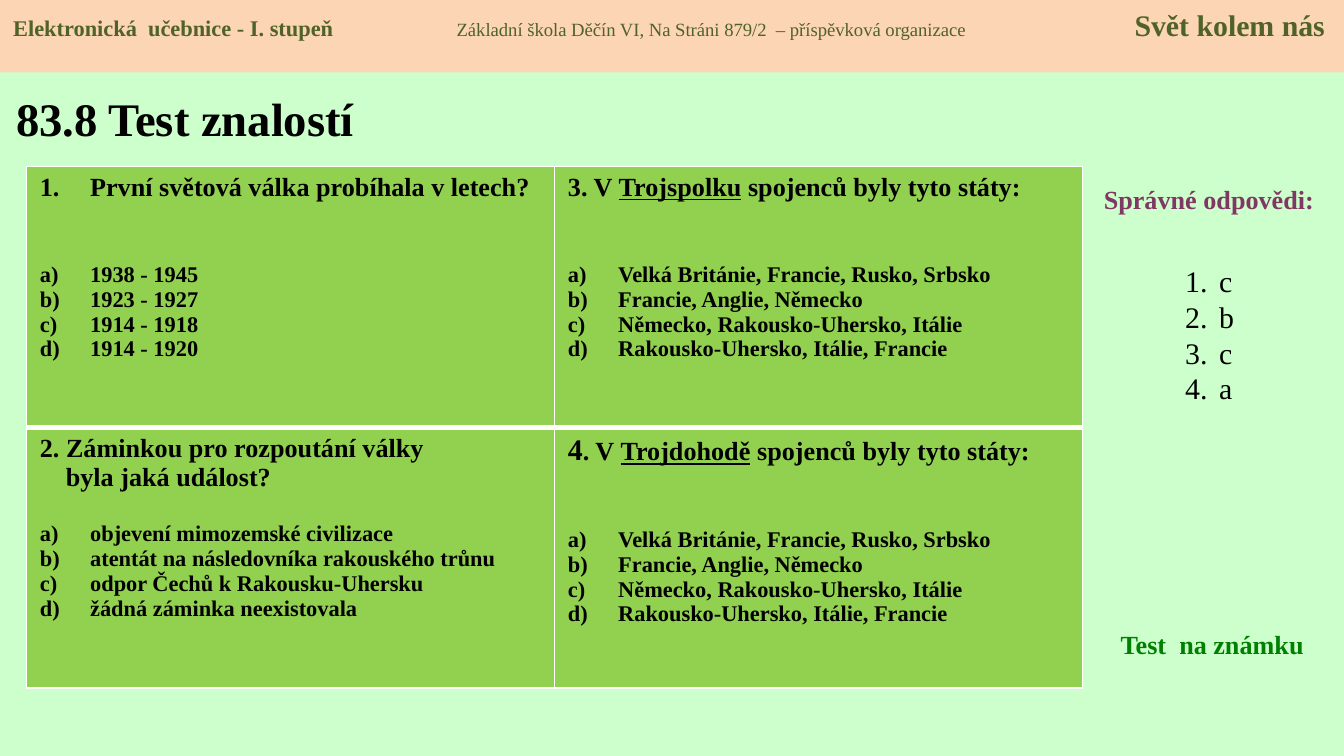
"""Build the quiz slide 83.8 with its table, answers and header band."""
from pptx import Presentation as Deck
from pptx.dml.color import RGBColor as Rgb
from pptx.enum.shapes import MSO_SHAPE as Kind
from pptx.enum.text import MSO_ANCHOR as Anchor, PP_ALIGN as Align
from pptx.oxml.ns import qn
from pptx.util import Cm, Pt
from lxml.etree import SubElement as Sub

HUES = {"page": "CCFFCC", "band": "FCD5B5", "cell": "92D050", "line": "FFFFFF",
        "text": "000000", "head": "4F6228", "plum": "813763", "mark": "008000"}
FACE = "Times New Roman"
ASK = {"size": Pt(14), "bold": True}
PICK = {"size": Pt(12), "bold": True}
STATES = ["Velká Británie, Francie, Rusko, Srbsko", "Francie, Anglie, Německo",
          "Německo, Rakousko-Uhersko, Itálie", "Rakousko-Uhersko, Itálie, Francie"]


def ask(text, **more):
    return text, {**ASK, **more}


QUIZ = [
    [{"ask": [[ask("První světová válka probíhala v letech?")]], "num": True, "gap": 32.2,
      "picks": ["1938 - 1945", "1923 - 1927", "1914 - 1918", "1914 - 1920"]},
     {"ask": [[ask("3. V "), ask("Trojspolku", underline=True),
               ask(" spojenců byly tyto státy:")]], "gap": 32.2, "picks": STATES}],
    [{"ask": [[ask("2. Záminkou pro rozpoutání války")], [ask("byla jaká událost?")]],
      "gap": 16.1,
      "picks": ["objevení mimozemské civilizace",
                "atentát na následovníka rakouského trůnu",
                "odpor Čechů k Rakousku-Uhersku", "žádná záminka neexistovala"]},
     {"ask": [[ask("4", size=Pt(16)), ask(". V "), ask("Trojdohodě", underline=True),
               ask(" spojenců byly tyto státy:")]], "gap": 32.2, "picks": STATES}],
]


class Page:
    def __init__(self, deck):
        self.slide = deck.slides.add_slide(deck.slide_layouts[5])
        self.paint(self.slide.background.fill, "page")

    def paint(self, fill, hue):
        fill.solid()
        fill.fore_color.rgb = Rgb.from_string(HUES[hue])

    def put(self, para, runs, hue="text"):
        for text, style in runs:
            run = para.add_run()
            run.text = text
            for key, val in {"name": FACE, **style}.items():
                setattr(run.font, key, val)
            run.font.color.rgb = Rgb.from_string(HUES[hue])

    def line(self, frame, first):
        return frame.paragraphs[0] if first else frame.add_paragraph()

    def indent(self, para, left, hang=0, mark=None):
        props = para._p.get_or_add_pPr()
        props.set("marL", str(Cm(left)))
        props.set("indent", str(-Cm(hang)))
        if mark:
            Sub(props, qn("a:buFont"), typeface="+mj-lt")
            Sub(props, qn("a:buAutoNum"), type=mark)

    def title(self, text, box):
        shape = self.slide.shapes.title
        for key, val in zip(("left", "top", "width", "height"), box):
            setattr(shape, key, Cm(val))
        frame = shape.text_frame
        frame.vertical_anchor = Anchor.MIDDLE
        para = frame.paragraphs[0]
        para.alignment = Align.LEFT
        self.put(para, [(text, {"size": Pt(25), "bold": True})])

    def label(self, lines, box, style, hue="text", align=Align.LEFT, mark=None):
        frame = self.slide.shapes.add_textbox(*map(Cm, box)).text_frame
        frame.word_wrap = False
        for i, line in enumerate(lines):
            para = self.line(frame, i == 0)
            if mark:
                self.indent(para, 0.64, 0.64, mark)
            para.alignment = align
            self.put(para, [(line, style)], hue)

    def band(self, runs, box, tabs):
        shape = self.slide.shapes.add_shape(Kind.RECTANGLE, *map(Cm, box))
        shape.shadow.inherit = False
        self.paint(shape.fill, "band")
        shape.line.fill.background()
        frame = shape.text_frame
        frame.word_wrap = True
        frame.vertical_anchor = Anchor.TOP
        para = frame.paragraphs[0]
        para.alignment = Align.LEFT
        stops = Sub(para._p.get_or_add_pPr(), qn("a:tabLst"))
        for place, side in tabs:
            Sub(stops, qn("a:tab"), pos=str(Cm(place)), algn=side)
        self.put(para, runs, "head")

    def edge(self, cell, sides):
        props = cell._tc.get_or_add_tcPr()
        for side, width in sides.items():
            line = Sub(props, qn(f"a:ln{side}"), w=str(Pt(width)))
            Sub(Sub(line, qn("a:solidFill")), qn("a:srgbClr"), val=HUES["line"])

    def fill(self, cell, item):
        frame = cell.text_frame
        for i, runs in enumerate(item["ask"]):
            para = self.line(frame, i == 0)
            if item.get("num"):
                self.indent(para, 0.95, 0.95, "arabicPeriod")
            elif i:
                self.indent(para, 0.49)
            self.put(para, runs)
        for i, pick in enumerate(item["picks"]):
            para = frame.add_paragraph()
            self.indent(para, 0.95, 0.95, "alphaLcParenR")
            if i == 0:
                para.space_before = Pt(item["gap"])
            self.put(para, [(pick, PICK)])

    def table(self, rows, box):
        grid = self.slide.shapes.add_table(len(rows), len(rows[0]), *map(Cm, box)).table
        for r, row in enumerate(rows):
            for c, item in enumerate(row):
                cell = grid.cell(r, c)
                self.fill(cell, item)
                self.edge(cell, {"L": 1, "R": 1, "T": 3 if r else 1, "B": 1 if r else 3})
                self.paint(cell.fill, "cell")


def main():
    deck = Deck()
    deck.slide_width, deck.slide_height = Cm(25.4), Cm(14.29)
    page = Page(deck)
    page.title("83.8 Test znalostí", (0.05, 1.4, 8.1, 1.65))
    page.label(["Správné odpovědi:"], (20.45, 3.35, 4.8, 0.86), ASK, "plum", Align.CENTER)
    page.table(QUIZ, (0.5, 3.15, 19.96, 9.86))
    page.label(["c", "b", "c", "a"], (22.15, 4.84, 1.4, 4.4), {"size": Pt(16)},
               mark="arabicPeriod")
    page.label(["Test  na známku"], (20.93, 11.76, 3.99, 0.86), ASK, "mark")
    page.band([("Elektronická  učebnice - I. stupeň\t", PICK),
               ("Základní škola Děčín VI, Na Stráni 879/2  – příspěvková organizace\t",
                {"size": Pt(10), "bold": False}),
               ("Svět kolem nás", {"size": Pt(16), "bold": True})],
              (0, 0, 25.4, 1.37), [(8.38, "l"), (24.79, "r")])
    deck.save("out.pptx")


if __name__ == "__main__":
    main()
